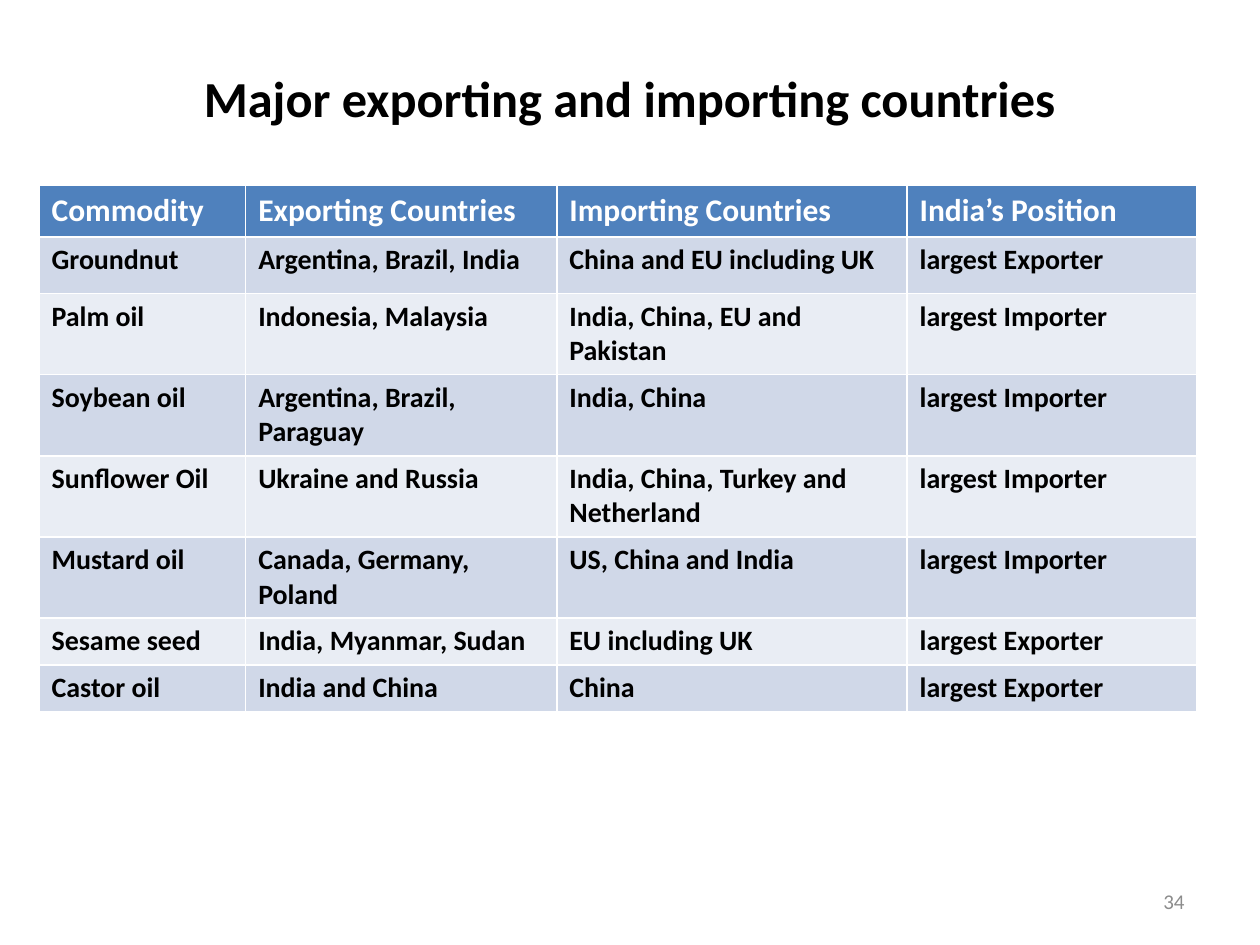
from pptx import Presentation
from pptx.dml.color import RGBColor
from pptx.enum.text import MSO_ANCHOR, PP_ALIGN
from pptx.util import Inches, Pt

MIDDLE = MSO_ANCHOR.MIDDLE
LEFT, CENTER, RIGHT = PP_ALIGN.LEFT, PP_ALIGN.CENTER, PP_ALIGN.RIGHT

TITLE = "Major exporting and importing countries"
PAGE = "34"
HEADER = ("Commodity", "Exporting Countries", "Importing Countries", "India’s Position")
TRADE = [
    ("Groundnut", "Argentina, Brazil, India", "China and EU including UK", "largest Exporter"),
    ("Palm oil", "Indonesia, Malaysia", "India, China, EU and Pakistan", "largest Importer"),
    ("Soybean oil", "Argentina, Brazil, Paraguay", "India, China", "largest Importer"),
    ("Sunflower Oil", "Ukraine and Russia", "India, China, Turkey and Netherland", "largest Importer"),
    ("Mustard oil", "Canada, Germany, Poland", "US, China and India", "largest Importer"),
    ("Sesame seed", "India, Myanmar, Sudan", "EU including UK", "largest Exporter"),
    ("Castor oil", "India and China", "China", "largest Exporter"),
]
COL_WIDTHS = (1.64, 2.47, 2.78, 2.3)
ROW_HEIGHTS = (0.41, 0.45, 0.61, 0.62, 0.62, 0.62, 0.37, 0.35)
COLORS = {
    "header": "4F81BD",
    "odd": "D0D8E8",
    "even": "E9EDF4",
    "white": "FFFFFF",
    "black": "000000",
    "gray": "8C8C8C",
}


def rgb(name):
    return RGBColor.from_string(COLORS[name])


def write(tf, text, size=16, color="black", bold=True, align=LEFT):
    tf.word_wrap = True
    p = tf.paragraphs[0]
    p.alignment = align
    r = p.add_run()
    r.text = text
    r.font.name = "Calibri"
    r.font.size = Pt(size)
    r.font.bold = bold
    r.font.color.rgb = rgb(color)


def place(sp, left, top, width, height):
    sp.left, sp.top = Inches(left), Inches(top)
    sp.width, sp.height = Inches(width), Inches(height)


def add_trade_table(s):
    rows = [HEADER] + TRADE
    frame = s.shapes.add_table(
        len(rows), len(HEADER), Inches(0.31), Inches(1.47),
        Inches(sum(COL_WIDTHS)), Inches(sum(ROW_HEIGHTS)))
    table = frame.table
    for col, width in zip(table.columns, COL_WIDTHS):
        col.width = Inches(width)
    for i, (row, height, texts) in enumerate(zip(table.rows, ROW_HEIGHTS, rows)):
        row.height = Inches(height)
        band = "header" if i == 0 else "odd" if i % 2 else "even"
        style = {"size": 18, "color": "white"} if i == 0 else {}
        for cell, text in zip(row.cells, texts):
            cell.fill.solid()
            cell.fill.fore_color.rgb = rgb(band)
            write(cell.text_frame, text, **style)


def main():
    prs = Presentation()
    prs.slide_width, prs.slide_height = Inches(10), Inches(7.5)
    s = prs.slides.add_slide(prs.slide_layouts[5])

    title = s.shapes.title
    place(title, 0.5, 0.3, 9, 0.95)
    title.text_frame.vertical_anchor = MIDDLE
    write(title.text_frame, TITLE, size=28.8, align=CENTER)

    add_trade_table(s)

    number = s.shapes.add_textbox(Inches(7.17), Inches(6.95), Inches(2.33), Inches(0.4))
    number.text_frame.vertical_anchor = MIDDLE
    write(number.text_frame, PAGE, size=12, color="gray", bold=False, align=RIGHT)

    prs.save("out.pptx")


if __name__ == "__main__":
    main()
